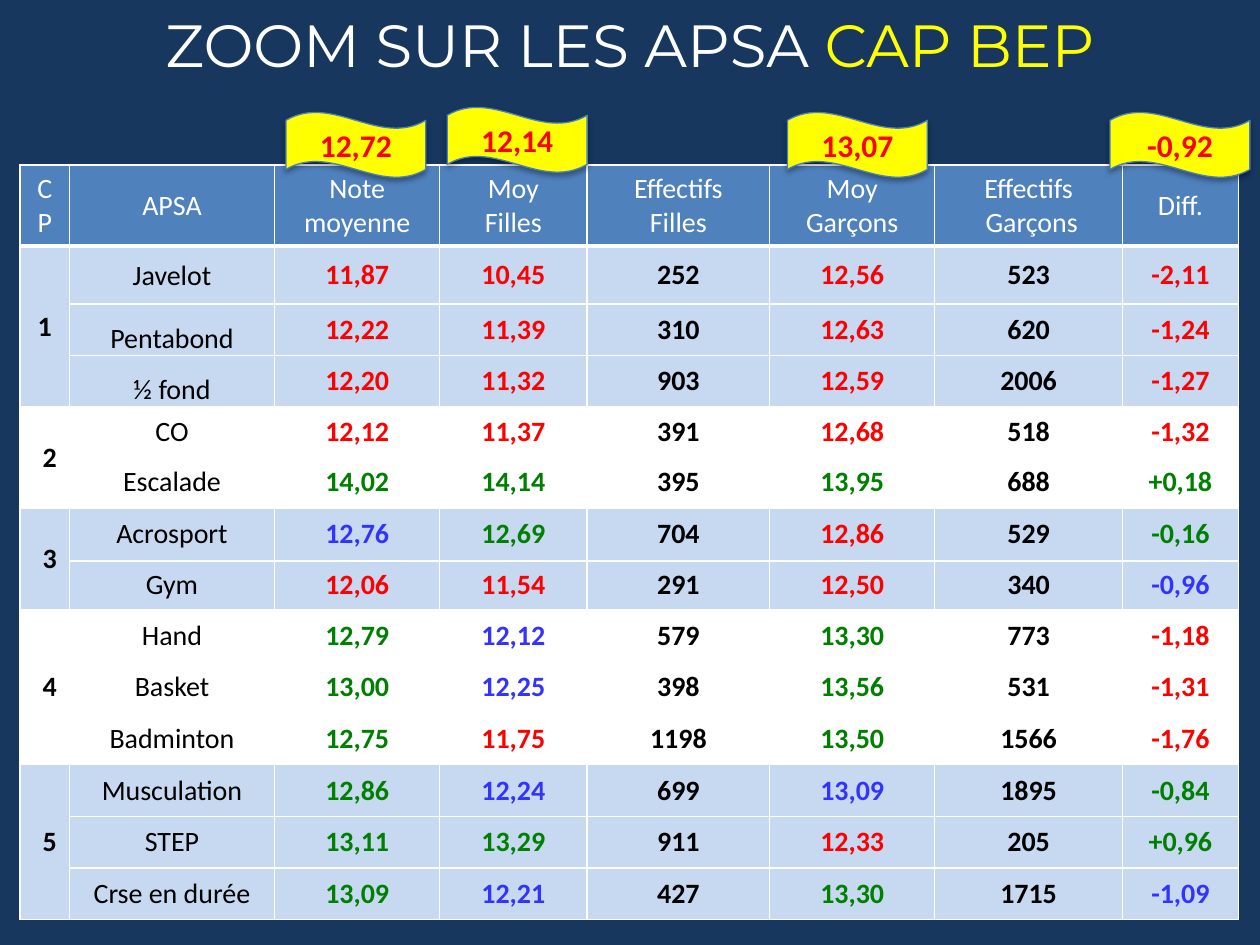
"""Build the slide of CAP BEP marks by sport, with the overall averages flagged above the table."""
from lxml import etree
from pptx import Presentation
from pptx.dml.color import RGBColor
from pptx.enum.shapes import MSO_SHAPE
from pptx.enum.text import MSO_ANCHOR, PP_ALIGN
from pptx.oxml.ns import qn
from pptx.util import Pt

WAVE = MSO_SHAPE.WAVE
MIDDLE, BOTTOM = MSO_ANCHOR.MIDDLE, MSO_ANCHOR.BOTTOM
CENTER, RIGHT = PP_ALIGN.CENTER, PP_ALIGN.RIGHT

NAVY, BLUE, PALE, EDGE = "17375E", "4F81BD", "C6D9F1", "4B7EBC"
WHITE, BLACK, YELLOW, RED = "FFFFFF", "000000", "FFFF00", "FF0000"
MARK_COLORS = {"R": RED, "G": "008000", "B": "3333FF", "K": BLACK}

TITLE = [("ZOOM SUR LES APSA ", WHITE), ("CAP BEP", YELLOW)]
HEADERS = ["CP", "APSA", "Note moyenne", "Moy\nFilles", "Effectifs\nFilles",
           "Moy\nGarçons", "Effectifs\n Garçons", "Diff."]
GROUPS = [
    ("1", [("Javelot", "11,87 10,45 252 12,56 523 -2,11", "RRKRKR"),
           ("Pentabond", "12,22 11,39 310 12,63 620 -1,24", "RRKRKR"),
           ("½ fond", "12,20 11,32 903 12,59 2006 -1,27", "RRKRKR")]),
    ("2", [("CO", "12,12 11,37 391 12,68 518 -1,32", "RRKRKR"),
           ("Escalade", "14,02 14,14 395 13,95 688 +0,18", "GGKGKG")]),
    ("3", [("Acrosport", "12,76 12,69 704 12,86 529 -0,16", "BGKRKG"),
           ("Gym", "12,06 11,54 291 12,50 340 -0,96", "RRKRKB")]),
    ("4", [("Hand", "12,79 12,12 579 13,30 773 -1,18", "GBKGKR"),
           ("Basket", "13,00 12,25 398 13,56 531 -1,31", "GBKGKR"),
           ("Badminton", "12,75 11,75 1198 13,50 1566 -1,76", "GRKGKR")]),
    ("5", [("Musculation", "12,86 12,24 699 13,09 1895 -0,84", "GBKBKG"),
           ("STEP", "13,11 13,29 911 12,33 205 +0,96", "GGKRKG"),
           ("Crse en durée", "13,09 12,21 427 13,30 1715 -1,09", "GBKGKB")]),
]
AVERAGES = [("12,72", 163.4, 64.1), ("12,14", 255.6, 61.2),
            ("13,07", 450, 64.1), ("-0,92", 634.3, 64.1)]

TABLE_LEFT, TABLE_TOP = 11.5, 94.3
COLUMN_WIDTHS = [28.1, 117.4, 94.3, 84.2, 104.4, 94.3, 107.3, 66.2]
ROW_HEIGHTS = [46, 33.1, 29.5, 29.5, 28.1, 29.5, 30.2, 28.1] + [29.5] * 6
TIGHT = {"margin_left": Pt(0.7), "margin_right": Pt(0.7),
         "margin_top": Pt(0.7), "margin_bottom": Pt(0)}


def color(value):
    return RGBColor.from_string(value)


def set_all(target, values):
    for name, value in values.items():
        setattr(target, name, value)


def write(frame, lines, size, font="Calibri", bold=False, align=CENTER):
    for index, spans in enumerate(lines):
        para = frame.add_paragraph() if index else frame.paragraphs[0]
        para.alignment = align
        for text, shade in spans:
            span = para.add_run()
            span.text = text
            set_all(span.font, {"name": font, "size": Pt(size), "bold": bold})
            span.font.color.rgb = color(shade)


def draw_borders(cell, row):
    widths = {"L": 1, "R": 1, "T": 3 if row == 1 else 1, "B": 1 if row else 3}
    for side, width in widths.items():
        line = etree.SubElement(cell._tc.get_or_add_tcPr(), qn(f"a:ln{side}"), w=str(Pt(width)))
        fill = etree.SubElement(line, qn("a:solidFill"))
        etree.SubElement(fill, qn("a:srgbClr"), val=WHITE)


def fill_cell(cell, row, background, text, shade, bold=False, align=CENTER, **layout):
    draw_borders(cell, row)
    cell.fill.solid()
    cell.fill.fore_color.rgb = color(background)
    set_all(cell, {"vertical_anchor": MIDDLE, **layout})
    lines = [[(line, shade)] for line in text.split("\n")]
    write(cell.text_frame, lines, 16, bold=bold, align=align)


def add_results(page):
    frame = page.shapes.add_table(len(ROW_HEIGHTS), len(HEADERS), Pt(TABLE_LEFT), Pt(TABLE_TOP),
                                  Pt(sum(COLUMN_WIDTHS)), Pt(sum(ROW_HEIGHTS)))
    table = frame.table
    table.horz_banding = False
    for column, width in zip(table.columns, COLUMN_WIDTHS):
        column.width = Pt(width)
    for line, height in zip(table.rows, ROW_HEIGHTS):
        line.height = Pt(height)
    for column, header in enumerate(HEADERS):
        fill_cell(table.cell(0, column), 0, BLUE, header, WHITE)

    row = 1
    for index, (group, sports) in enumerate(GROUPS):
        background = WHITE if index % 2 else PALE
        first, last = table.cell(row, 0), table.cell(row + len(sports) - 1, 0)
        first.merge(last)
        layout = {"align": RIGHT} if index else TIGHT
        fill_cell(first, row, background, group, BLACK, bold=True, **layout)
        for sport, marks, codes in sports:
            layout = {} if index else {**TIGHT, "vertical_anchor": MIDDLE if row == 1 else BOTTOM}
            fill_cell(table.cell(row, 1), row, background, sport, BLACK, **layout)
            for column, (mark, code) in enumerate(zip(marks.split(), codes), 2):
                fill_cell(table.cell(row, column), row, background, mark,
                          MARK_COLORS[code], bold=True)
            row += 1


def add_title(page):
    box = page.shapes.add_textbox(Pt(0), Pt(0), Pt(720), Pt(50.4))
    set_all(box.text_frame, {"word_wrap": True, "vertical_anchor": MIDDLE})
    write(box.text_frame, [TITLE], 34, font="Montserrat")


def add_flag(page, text, left, top):
    flag = page.shapes.add_shape(WAVE, Pt(left), Pt(top), Pt(79.9), Pt(37.4))
    flag.fill.solid()
    flag.fill.fore_color.rgb = color(YELLOW)
    flag.line.color.rgb = color(EDGE)
    flag.line.width = Pt(0.75)
    flag.shadow.inherit = False
    effects = flag._element.spPr.find(qn("a:effectLst"))
    shadow = etree.SubElement(effects, qn("a:outerShdw"), blurRad=str(Pt(3.1)),
                              dist=str(Pt(1.8)), dir="5400000", rotWithShape="0")
    shade = etree.SubElement(shadow, qn("a:srgbClr"), val=BLACK)
    etree.SubElement(shade, qn("a:alpha"), val="35000")
    flag.text_frame.vertical_anchor = MIDDLE
    write(flag.text_frame, [[(text, RED)]], 18, bold=True)


def main():
    deck = Presentation()
    set_all(deck, {"slide_width": Pt(720), "slide_height": Pt(540)})
    page = deck.slides.add_slide(deck.slide_layouts[6])
    page.background.fill.solid()
    page.background.fill.fore_color.rgb = color(NAVY)
    add_results(page)
    add_title(page)
    for average in AVERAGES:
        add_flag(page, *average)
    deck.save("out.pptx")


if __name__ == "__main__":
    main()
